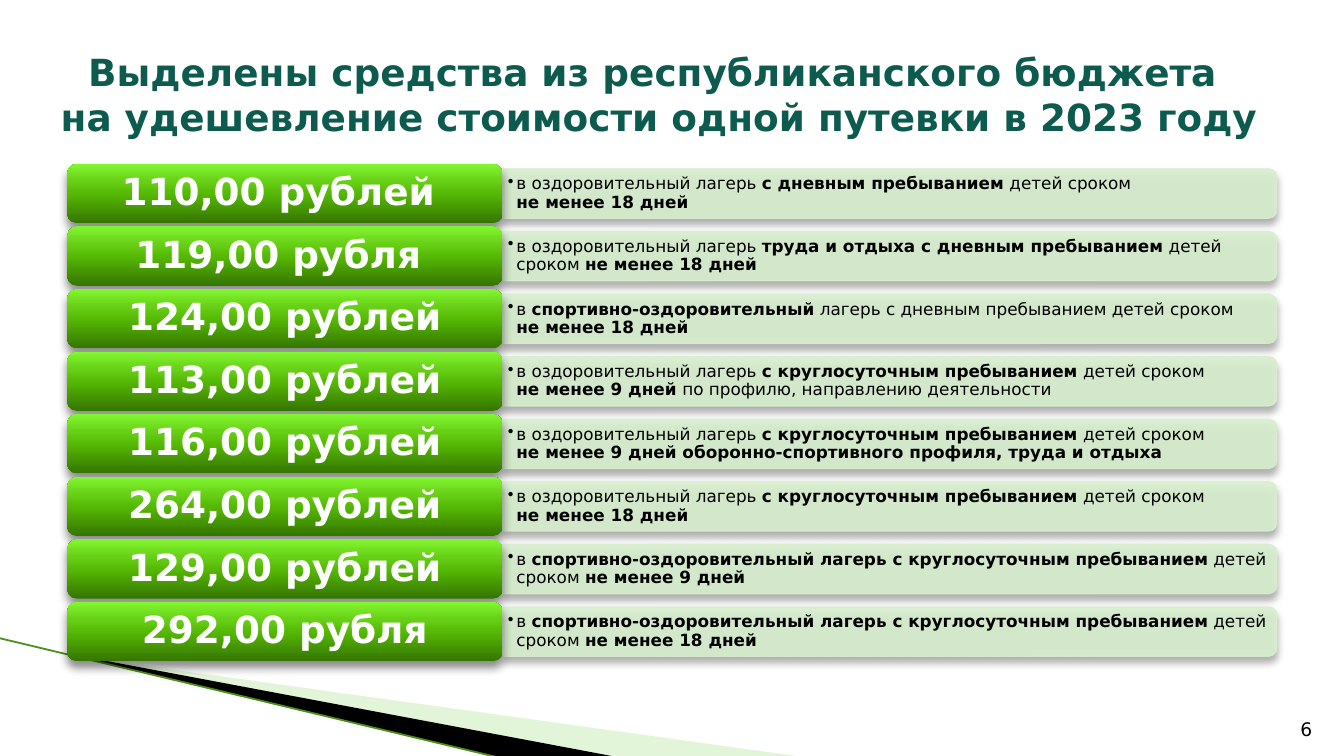
"""Build the slide on subsidised camp vouchers for 2023."""
from copy import deepcopy

from lxml.etree import SubElement
from pptx import Presentation
from pptx.dml.color import RGBColor
from pptx.enum.shapes import MSO_CONNECTOR, MSO_SHAPE as SHAPE
from pptx.enum.text import MSO_ANCHOR as ANCHOR, PP_ALIGN as ALIGN
from pptx.oxml.ns import qn
from pptx.util import Cm, Pt

FONT = "DejaVu Sans"
TITLE = ("**Выделены средства из республиканского бюджета \n"
         "на удешевление стоимости одной путевки в 2023 году**")
PAGE = "6"
ROWS = [
    ("110,00 рублей ", "в оздоровительный лагерь **с дневным пребыванием **детей сроком \n**не менее 18 дней**"),
    ("119,00 рубля ", "в оздоровительный лагерь **труда и отдыха с дневным пребыванием **детей сроком **не менее 18 дней**"),
    ("124,00 рублей", "в **спортивно-оздоровительный **лагерь с дневным пребыванием детей сроком \n**не менее 18 дней**"),
    ("113,00 рублей", "в оздоровительный лагерь **с круглосуточным пребыванием **детей сроком \n**не менее 9 дней **по профилю, направлению деятельности"),
    ("116,00 рублей", "в оздоровительный лагерь **с круглосуточным пребыванием **детей сроком \n**не менее 9 дней оборонно-спортивного профиля, труда и отдыха**"),
    ("264,00 рублей", "в оздоровительный лагерь **с круглосуточным пребыванием **детей сроком \n**не менее 18 дней**"),
    ("129,00 рублей", "в **спортивно-оздоровительный лагерь с круглосуточным пребыванием **детей сроком **не менее 9 дней**"),
    ("292,00 рубля", "в **спортивно-оздоровительный лагерь с круглосуточным пребыванием **детей сроком **не менее 18 дней**"),
]
WEDGES = [
    ("B8E7A1", 40, [(1.4, 12.4), (15.11, 14.3), (11.58, 14.3)]),
    ("000000", 100, [(1.35, 12.37), (11.61, 14.3), (9.45, 14.33), (1.37, 12.4)]),
]
GREENS = [(0, "357500"), (50, "56B905"), (70, "67CF16"), (100, "82F631")]

FIRST_TOP, LAST_TOP = 3.1, 11.38
AMOUNT_LEFT, AMOUNT_WIDTH, AMOUNT_HEIGHT = 1.27, 8.23, 1.12
BAR_WIDTH, BAR_HEIGHT = 14.63, 0.93


def color(value):
    return RGBColor.from_string(value)


def set_alpha(color_format_parent, percent):
    for element in color_format_parent.iter(qn("a:srgbClr")):
        SubElement(element, qn("a:alpha"), val=str(percent * 1000))


def add_shadow(shape, alpha, blur, distance):
    shape.shadow.inherit = False
    effects = shape._element.spPr.find(qn("a:effectLst"))
    shadow = SubElement(effects, qn("a:outerShdw"), blurRad=str(Pt(blur)),
                        dist=str(Pt(distance)), dir="5400000", rotWithShape="0")
    SubElement(shadow, qn("a:srgbClr"), val="000000")
    set_alpha(shadow, alpha)


def write(shape, text, *, size, ink="000000", align=ALIGN.LEFT, anchor=ANCHOR.MIDDLE,
          insets=(0.25, 0.13), spacing=None, bullet=False):
    frame = shape.text_frame
    frame.word_wrap = True
    frame.vertical_anchor = anchor
    frame.margin_left = frame.margin_right = Cm(insets[0])
    frame.margin_top = frame.margin_bottom = Cm(insets[1])
    paragraph = frame.paragraphs[0]
    paragraph.alignment = align
    if spacing:
        paragraph.line_spacing = spacing
    if bullet:
        properties = paragraph._p.get_or_add_pPr()
        properties.set("marL", str(Cm(0.16)))
        properties.set("indent", str(-Cm(0.16)))
        SubElement(properties, qn("a:buChar"), char="•")
    for index, part in enumerate(text.split("**")):
        for number, line in enumerate(part.split("\n")):
            if number:
                paragraph.add_line_break()
                paragraph._p[-1].append(deepcopy(paragraph.runs[-1]._r.rPr))
            if line:
                run = paragraph.add_run()
                run.text = line
                run.font.name, run.font.size = FONT, Pt(size)
                run.font.bold = index % 2 == 1
                run.font.color.rgb = color(ink)


def add_text(slide, box, text, **style):
    write(slide.shapes.add_textbox(*map(Cm, box)), text, **style)


def add_wedge(slide, fill, alpha, points):
    start, *others = [(Cm(x), Cm(y)) for x, y in points]
    builder = slide.shapes.build_freeform(*start)
    builder.add_line_segments(others)
    shape = builder.convert_to_shape()
    shape.fill.solid()
    shape.fill.fore_color.rgb = color(fill)
    set_alpha(shape._element.spPr, alpha)
    shape.line.fill.background()
    shape.shadow.inherit = False


def add_bar(slide, left, middle):
    center = left + BAR_WIDTH / 2
    shape = slide.shapes.add_shape(
        SHAPE.ROUND_2_SAME_RECTANGLE, Cm(center - BAR_HEIGHT / 2),
        Cm(middle - BAR_WIDTH / 2), Cm(BAR_HEIGHT), Cm(BAR_WIDTH))
    shape.rotation = 90
    shape.fill.solid()
    shape.fill.fore_color.rgb = color("D8EECE")
    shape.line.color.rgb = color("D8EECE")
    shape.line.width = Pt(0.75)
    set_alpha(shape._element.spPr, 90)
    add_shadow(shape, 35, 4, 3)


def add_amount(slide, top, text):
    shape = slide.shapes.add_shape(SHAPE.ROUNDED_RECTANGLE, Cm(AMOUNT_LEFT), Cm(top),
                                   Cm(AMOUNT_WIDTH), Cm(AMOUNT_HEIGHT))
    shape.fill.gradient()
    shape.fill.gradient_angle = 90
    stops = shape._element.spPr.find(".//" + qn("a:gsLst"))
    stops.clear()
    for position, value in GREENS:
        stop = SubElement(stops, qn("a:gs"), pos=str(position * 1000))
        SubElement(stop, qn("a:srgbClr"), val=value)
    shape.line.fill.background()
    add_shadow(shape, 45, 5, 3)
    write(shape, f"**{text}**", size=20, ink="FFFFFF", align=ALIGN.CENTER,
          insets=(0.25, 0.15), spacing=0.9)


def main():
    presentation = Presentation()
    presentation.slide_width, presentation.slide_height = Cm(25.4), Cm(14.29)
    slide = presentation.slides.add_slide(presentation.slide_layouts[6])

    for wedge in WEDGES:
        add_wedge(slide, *wedge)
    line = slide.shapes.add_connector(MSO_CONNECTOR.STRAIGHT, Cm(-0.02), Cm(12.06),
                                      Cm(9.43), Cm(14.32))
    line.line.color.rgb = color("4E8F1C")
    line.line.width = Pt(0.95)
    SubElement(line._element.spPr, qn("a:effectLst"))

    pitch = (LAST_TOP - FIRST_TOP) / (len(ROWS) - 1)
    bar_left = AMOUNT_LEFT + AMOUNT_WIDTH
    for index, (amount, purpose) in enumerate(ROWS):
        top = FIRST_TOP + index * pitch
        middle = top + AMOUNT_HEIGHT / 2
        add_bar(slide, bar_left, middle)
        add_text(slide, (bar_left, middle - 0.41, 14.58, 0.82), purpose, size=9,
                 insets=(0.1, 0.05), spacing=0.9, bullet=True)
        add_amount(slide, top, amount)

    add_text(slide, (24.03, 13.36, 1.02, 0.76), PAGE, size=10, align=ALIGN.RIGHT,
             anchor=ANCHOR.BOTTOM)
    add_text(slide, (0.79, 0.58, 23.34, 2.39), TITLE, size=20, ink="0D5A4F",
             align=ALIGN.CENTER)
    presentation.save("out.pptx")


if __name__ == "__main__":
    main()
